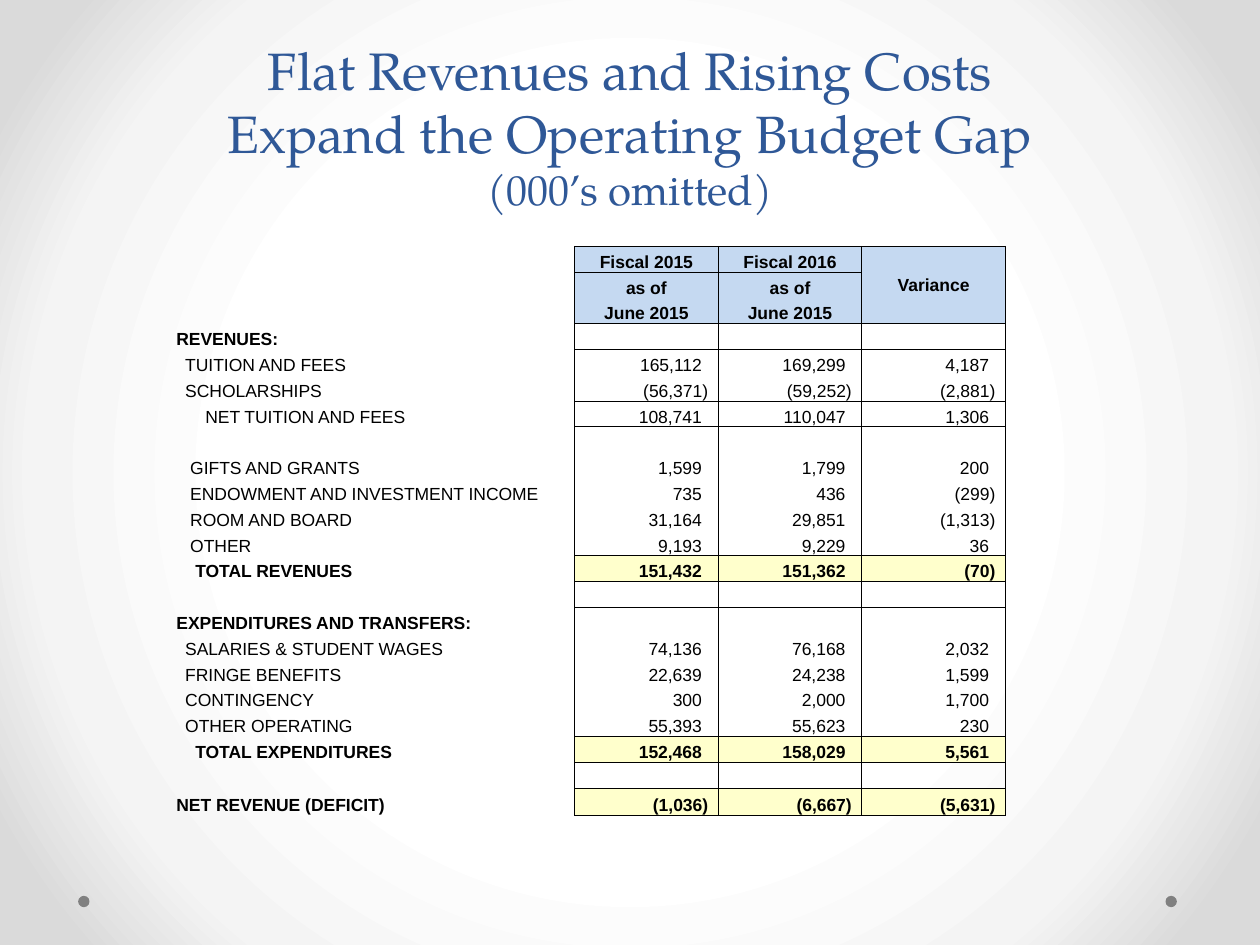
import pptx
import pptx.util
import pptx.dml.color
import pptx.enum.shapes
import pptx.enum.text
import pptx.oxml
import pptx.oxml.ns

Inches, Pt = pptx.util.Inches, pptx.util.Pt
RGB = pptx.dml.color.RGBColor
ALIGN = pptx.enum.text.PP_ALIGN
ANCHOR = pptx.enum.text.MSO_ANCHOR
NS = pptx.oxml.ns.nsdecls("a", "p")

BLUE = RGB(0x2F, 0x58, 0x97)
GRAY = RGB(0x80, 0x80, 0x80)
BLACK = RGB(0, 0, 0)
SKY = RGB(0xC5, 0xD9, 0xF1)
CREAM = RGB(0xFF, 0xFF, 0xCC)

TITLE = [
    ("Flat Revenues and Rising Costs", 30),
    ("Expand the Operating Budget Gap", 30),
    ("(000’s omitted)", 24),
]
GAP = ("", 0, "", "", "")
ROWS = [
    GAP,
    ("", 0, "Fiscal 2015", "Fiscal 2016", "Variance"),
    ("", 0, "as of", "as of", ""),
    ("", 0, "June 2015", "June 2015", ""),
    ("REVENUES:", 0.01, "", "", ""),
    ("TUITION AND FEES", 0.08, "165,112", "169,299", "4,187"),
    ("SCHOLARSHIPS", 0.08, "(56,371)", "(59,252)", "(2,881)"),
    ("NET TUITION AND FEES", 0.24, "108,741", "110,047", "1,306"),
    GAP,
    ("GIFTS AND GRANTS", 0.12, "1,599", "1,799", "200"),
    ("ENDOWMENT AND INVESTMENT INCOME", 0.12, "735", "436", "(299)"),
    ("ROOM AND BOARD", 0.12, "31,164", "29,851", "(1,313)"),
    ("OTHER", 0.12, "9,193", "9,229", "36"),
    ("TOTAL REVENUES", 0.16, "151,432", "151,362", "(70)"),
    GAP,
    ("EXPENDITURES AND TRANSFERS:", 0.01, "", "", ""),
    ("SALARIES & STUDENT WAGES", 0.08, "74,136", "76,168", "2,032"),
    ("FRINGE BENEFITS", 0.08, "22,639", "24,238", "1,599"),
    ("CONTINGENCY", 0.08, "300", "2,000", "1,700"),
    ("OTHER OPERATING", 0.08, "55,393", "55,623", "230"),
    ("TOTAL EXPENDITURES", 0.16, "152,468", "158,029", "5,561"),
    GAP,
    ("NET REVENUE (DEFICIT)", 0.01, "(1,036)", "(6,667)", "(5,631)"),
    GAP,
]
WIDTHS = [1.85, 0.66, 0.66, 1.14, 1.14, 1.14, 0.66]
HEADS = (1, 2, 3)
TOTALS = (13, 20, 22)
BOLD = HEADS + TOTALS + (4, 15)
RULES = {0, 3, 6, 12, 13, 19, 20, 21, 22}
SPANS = [((1, 5), (3, 5)), ((10, 0), (10, 2)), ((15, 0), (15, 1)), ((16, 0), (16, 1))]
STOPS = [(50, "FFFFFF"), (76, "F4F4F4"), (92, "DADADA")]


def paint(slide):
    stops = "".join(
        f'<a:gs pos="{pos * 1000}"><a:srgbClr val="{tint}"/></a:gs>' for pos, tint in STOPS
    )
    slide.background.fill.solid()
    old = slide.background.fill._xPr
    fill = pptx.oxml.parse_xml(
        f'<a:gradFill {NS} rotWithShape="1"><a:gsLst>{stops}</a:gsLst><a:path path="circle">'
        '<a:fillToRect l="50000" t="50000" r="50000" b="50000"/></a:path></a:gradFill>'
    )
    old.replace(old[0], fill)


def edge(cell, sides):
    props = cell._tc.get_or_add_tcPr()
    for spot, side in enumerate(sides):
        line = pptx.oxml.parse_xml(
            f'<a:ln{side} {NS} w="6350"><a:solidFill><a:srgbClr val="{BLACK}"/>'
            f"</a:solidFill></a:ln{side}>"
        )
        props.insert(spot, line)


def fill(cell, text, row, left=0.01, right=0.01, align=ALIGN.LEFT):
    cell.margin_left, cell.margin_right = Inches(left), Inches(right)
    cell.margin_top, cell.margin_bottom = Inches(0.01), 0
    cell.vertical_anchor = ANCHOR.BOTTOM
    cell.text = text
    para = cell.text_frame.paragraphs[0]
    para.alignment = align
    para.font.name, para.font.size = "Arial", Pt(10)
    para.font.bold, para.font.color.rgb = row in BOLD, BLACK


def build():
    deck = pptx.Presentation()
    deck.slide_width, deck.slide_height = Inches(10), Inches(7.5)
    slide = deck.slides.add_slide(deck.slide_layouts[5])
    paint(slide)

    for left in (9.25, 0.62):
        dot = slide.shapes.add_shape(
            pptx.enum.shapes.MSO_SHAPE.OVAL,
            Inches(left), Inches(7.11), Inches(0.09), Inches(0.09),
        )
        dot.shadow.inherit = False
        dot.fill.solid()
        dot.fill.fore_color.rgb = GRAY
        dot.line.fill.background()

    title = slide.shapes.title
    title.left, title.top, title.width, title.height = map(Inches, (0.5, 0, 9, 1.75))
    frame = title.text_frame
    frame.auto_size = pptx.enum.text.MSO_AUTO_SIZE.NONE
    frame.vertical_anchor = ANCHOR.BOTTOM
    para = frame.paragraphs[0]
    para.alignment = ALIGN.CENTER
    para.font.name, para.font.color.rgb = "TeX Gyre Pagella", BLUE
    for spot, (text, size) in enumerate(TITLE):
        if spot:
            para.add_line_break()
        run = para.add_run()
        run.text, run.font.size = text, Pt(size)

    table = slide.shapes.add_table(
        len(ROWS), len(WIDTHS), Inches(1.39), Inches(1.75), Inches(sum(WIDTHS)), Inches(4.95)
    ).table
    table.first_row = table.horz_banding = False
    style = table._tbl.tblPr.find(pptx.oxml.ns.qn("a:tableStyleId"))
    style.text = "{2D5ABB26-0587-4C30-8999-92F81FD0307C}"
    for col, width in zip(table.columns, WIDTHS):
        col.width = Inches(width)

    for row, (label, indent, *values) in enumerate(ROWS):
        table.rows[row].height = Inches(0.22 if row >= 22 else 0.205)
        texts = [label, "", "", *values, ""]
        for col, text in enumerate(texts):
            cell = table.cell(row, col)
            cell.fill.background()
            if not 3 <= col <= 5:
                fill(cell, text, row, left=indent if col == 0 else 0.01)
                continue
            if row in HEADS:
                fill(cell, text, row, align=ALIGN.CENTER)
            else:
                right = 0.08 if text.startswith("(") else 0.13
                fill(cell, text, row, right=right, align=ALIGN.RIGHT)
            if row in HEADS + TOTALS:
                cell.fill.solid()
                cell.fill.fore_color.rgb = SKY if row in HEADS else CREAM
            sides = ["L", "R"] if 0 < row < len(ROWS) - 1 else []
            if row - 1 in RULES:
                sides.append("T")
            if row in RULES:
                sides.append("B")
            edge(cell, sides)

    for start, end in SPANS:
        table.cell(*start).merge(table.cell(*end))
    table.cell(1, 5).vertical_anchor = ANCHOR.MIDDLE
    deck.save("out.pptx")


if __name__ == "__main__":
    build()
